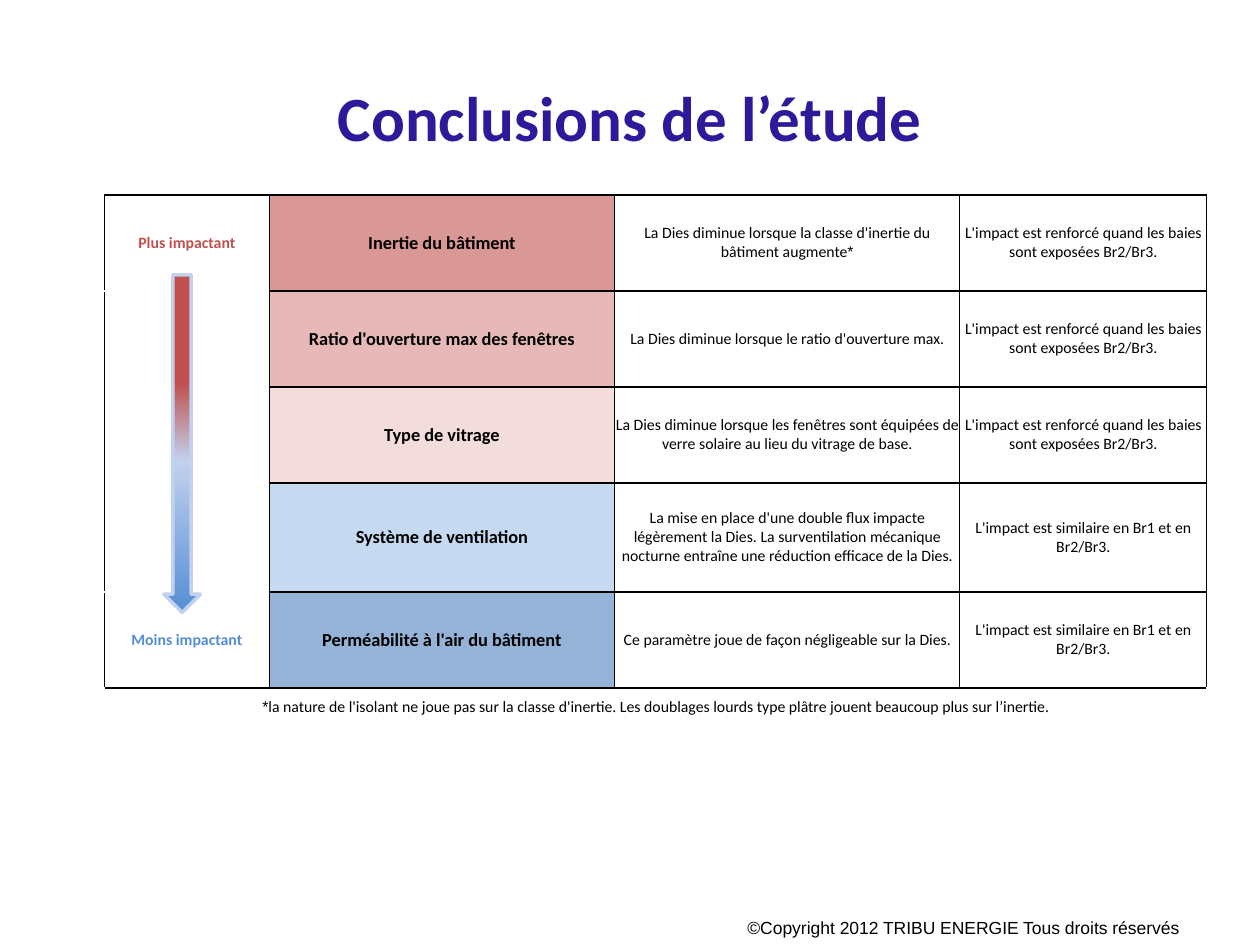
from lxml import etree
from pptx import Presentation
from pptx.dml.color import RGBColor
from pptx.enum.shapes import MSO_SHAPE
from pptx.enum.text import MSO_ANCHOR, PP_ALIGN
from pptx.oxml.ns import qn
from pptx.util import Pt

DOWN_ARROW = MSO_SHAPE.DOWN_ARROW
MIDDLE = MSO_ANCHOR.MIDDLE
LEFT, CENTER = PP_ALIGN.LEFT, PP_ALIGN.CENTER

BLACK, WHITE = "000000", "FFFFFF"
RED, BLUE, PALE_BLUE = "C0504D", "538ED5", "C2D1ED"
COLUMN_WIDTHS = [94.3, 197.3, 197.3, 141.1]
ROW_HEIGHTS = [54.85, 54.85, 54.85, 62.4, 54.85, 22.3]
REINFORCED = "L'impact est renforcé quand les baies sont exposées Br2/Br3."
SIMILAR = "L'impact est similaire en Br1 et en Br2/Br3."
PARAMETERS = [
    ("Inertie du bâtiment", "D99795",
     "La Dies diminue lorsque la classe d'inertie du bâtiment augmente*", REINFORCED),
    ("Ratio d'ouverture max des fenêtres", "E6B9B8",
     "La Dies diminue lorsque le ratio d'ouverture max.", REINFORCED),
    ("Type de vitrage", "F2DDDC",
     "La Dies diminue lorsque les fenêtres sont équipées de verre solaire "
     "au lieu du vitrage de base.", REINFORCED),
    ("Système de ventilation", "C5D9F1",
     "La mise en place d'une double flux impacte légèrement la Dies. La surventilation "
     "mécanique nocturne entraîne une réduction efficace de la Dies.", SIMILAR),
    ("Perméabilité à l'air du bâtiment", "95B3D7",
     "Ce paramètre joue de façon négligeable sur la Dies.", SIMILAR),
]
FOOTNOTE = ("*la nature de l'isolant ne joue pas sur la classe d'inertie. "
            "Les doublages lourds type plâtre jouent beaucoup plus sur l’inertie.")


def color(value):
    """Return the colour for a hex string."""
    return RGBColor.from_string(value)


def format_font(font, name, size, value, bold=False):
    """Set the face, size, colour and weight of a font."""
    font.name = name
    font.size = Pt(size)
    font.bold = bold
    font.color.rgb = color(value)


def add_text(slide, box, text, align, name, size, value, bold=False):
    """Add a wrapped, vertically centred text box."""
    frame = slide.shapes.add_textbox(*map(Pt, box)).text_frame
    frame.word_wrap = True
    frame.vertical_anchor = MIDDLE
    frame.text = text
    paragraph = frame.paragraphs[0]
    paragraph.alignment = align
    format_font(paragraph.runs[0].font, name, size, value, bold)


def fill_cell(cell, text, fill=WHITE, size=9, value=BLACK, bold=False):
    """Write centred text in a cell, with asterisks in Arial."""
    cell.fill.solid()
    cell.fill.fore_color.rgb = color(fill)
    cell.vertical_anchor = MIDDLE
    cell.margin_left = cell.margin_right = cell.margin_top = cell.margin_bottom = 0
    paragraph = cell.text_frame.paragraphs[0]
    paragraph.alignment = CENTER
    for piece in filter(None, text.partition("*")):
        run = paragraph.add_run()
        run.text = piece
        format_font(run.font, "Arial" if piece == "*" else "Calibri", size, value, bold)


def set_borders(cell, **widths):
    """Draw black borders of the given widths on the sides L, R, T and B."""
    properties = cell._tc.get_or_add_tcPr()
    for index, side in enumerate(side for side in "LRTB" if side in widths):
        line = etree.Element(qn(f"a:ln{side}"), w=str(Pt(widths[side])))
        solid = etree.SubElement(line, qn("a:solidFill"))
        etree.SubElement(solid, qn("a:srgbClr"), val=BLACK)
        properties.insert(index, line)


def add_impact_table(slide):
    """Add the table of parameters ranked by impact."""
    frame = slide.shapes.add_table(len(ROW_HEIGHTS), len(COLUMN_WIDTHS), Pt(59.6), Pt(111.4),
                                   Pt(sum(COLUMN_WIDTHS)), Pt(sum(ROW_HEIGHTS)))
    table = frame.table
    table.first_row = table.horz_banding = False
    for column, width in zip(table.columns, COLUMN_WIDTHS):
        column.width = Pt(width)
    for row, height in zip(table.rows, ROW_HEIGHTS):
        row.height = Pt(height)

    last = len(PARAMETERS) - 1
    scale_labels = {0: ("Plus impactant", RED), last: ("Moins impactant", BLUE)}
    for index, (parameter, fill, effect, exposure) in enumerate(PARAMETERS):
        scale, name, effect_cell, exposure_cell = table.rows[index].cells
        label, value = scale_labels.get(index, ("", BLACK))
        fill_cell(scale, label, value=value, bold=True)
        fill_cell(name, parameter, fill, 10.5, bold=True)
        fill_cell(effect_cell, effect)
        fill_cell(exposure_cell, exposure)
        outer = {0: {"T": 1}, last: {"B": 1}}.get(index, {})
        set_borders(scale, L=1, R=1, **outer)
        set_borders(name, L=1, R=1, T=1, B=1)
        set_borders(effect_cell, L=1, R=0.5, T=1, B=1)
        set_borders(exposure_cell, L=0.5, R=1, T=1, B=1)
    table.cell(1, 0).merge(table.cell(last - 1, 0))

    for cell in table.rows[last + 1].cells:
        set_borders(cell, T=1)
    footnote = table.cell(last + 1, 0)
    footnote.merge(table.cell(last + 1, len(COLUMN_WIDTHS) - 1))
    fill_cell(footnote, FOOTNOTE)


def add_gradient_arrow(slide, box, stops):
    """Add a down arrow shaded from top to bottom."""
    arrow = slide.shapes.add_shape(DOWN_ARROW, *map(Pt, box))
    arrow.shadow.inherit = False
    arrow.line.color.rgb = color(PALE_BLUE)
    arrow.line.width = Pt(2)
    arrow.fill.gradient()
    arrow.fill.gradient_angle = 270
    stop_list = arrow._element.spPr.find(".//" + qn("a:gsLst"))
    for stop in list(stop_list):
        stop_list.remove(stop)
    for percent, value in stops:
        stop = etree.SubElement(stop_list, qn("a:gs"), pos=str(percent * 1000))
        etree.SubElement(stop, qn("a:srgbClr"), val=value)


def main():
    """Build and save the slide."""
    presentation = Presentation()
    presentation.slide_width, presentation.slide_height = Pt(720), Pt(540)
    slide = presentation.slides.add_slide(presentation.slide_layouts[6])
    add_text(slide, (420, 520.6, 300, 19.4),
             "©Copyright 2012 TRIBU ENERGIE Tous droits réservés", LEFT, "Arial", 10, BLACK)
    add_text(slide, (36, 21.6, 648, 90), "Conclusions de l’étude",
             CENTER, "Calibri", 36, "2C1A9A", True)
    add_impact_table(slide)
    add_gradient_arrow(slide, (93.6, 157, 20.9, 193),
                       [(32, RED), (55, PALE_BLUE), (100, "558ED5")])
    presentation.save("out.pptx")


if __name__ == "__main__":
    main()
